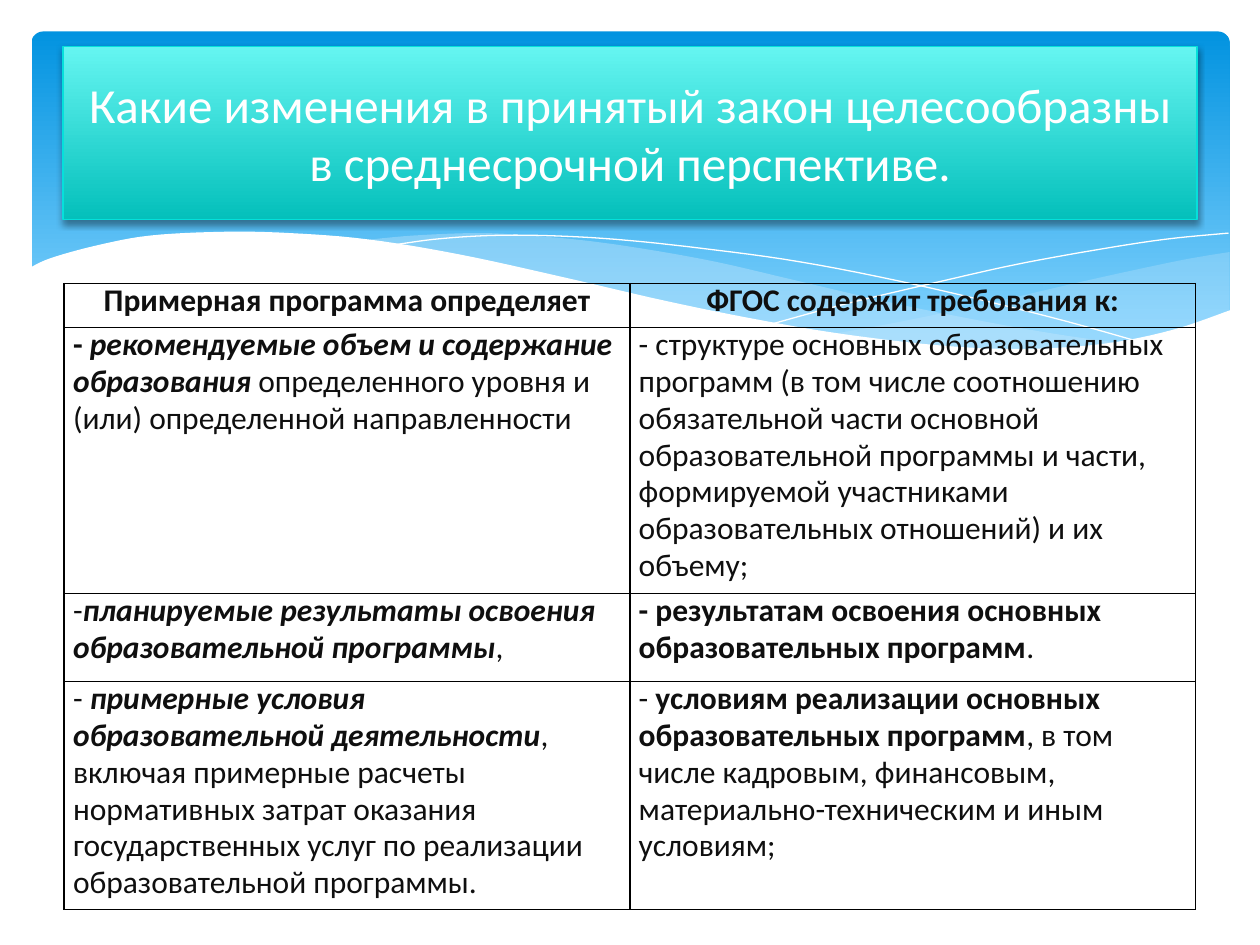
from lxml.etree import SubElement
from pptx import Presentation
from pptx.dml.color import RGBColor
from pptx.enum.shapes import MSO_SHAPE
from pptx.enum.text import MSO_ANCHOR, MSO_AUTO_SIZE, PP_ALIGN
from pptx.oxml import parse_xml
from pptx.oxml.ns import nsdecls, qn
from pptx.util import Inches, Pt

COLORS = {
    "sky": "0293E0", "pale": "83D3FE", "mist": "C6E7FC", "white": "FFFFFF",
    "aqua": "65F5F1", "teal": "04C0BB", "edge": "05E0DB",
    "ink": "0F0F0F", "black": "000000",
}
FONT = "Calibri"
TITLE = "Какие изменения в принятый закон целесообразны в среднесрочной перспективе."
# Each cell is a list of (text, style) runs: b is bold, i is italic
ROWS = [
    [[("Примерная программа определяет", "b")],
     [("ФГОС содержит требования к:", "b")]],
    [[("- ", "b"), ("рекомендуемые объем и содержание образования", "bi"),
      (" определенного уровня и (или) определенной направленности", "")],
     [("- структуре основных образовательных программ (в том числе соотношению "
       "обязательной части основной образовательной программы и части, "
       "формируемой участниками образовательных отношений) и их объему;", "")]],
    [[("-", ""), ("планируемые результаты освоения образовательной программы", "bi"),
      (",", "")],
     [("- результатам освоения основных образовательных программ", "b"), (".", "")]],
    [[("- ", ""), ("примерные условия образовательной деятельности", "bi"),
      (", включая примерные расчеты нормативных затрат оказания государственных "
       "услуг по реализации образовательной программы.", "")],
     [("- ", ""), ("условиям реализации основных образовательных программ", "b"),
      (", в том числе кадровым, финансовым, материально-техническим и иным "
       "условиям;", "")]],
]
HEIGHTS = [0.35, 2.11, 0.7, 1.81]

# Wave edges in inches; each edge is smoothed on its own
RIGHT = [
    [(9.76, 2), (9.35, 2.07), (8.61, 2.23), (7.79, 2.42), (7.06, 2.57), (6.61, 2.65)],
    [(6.61, 2.65), (7.05, 2.71), (7.57, 2.76), (8.03, 2.78), (8.44, 2.77),
     (8.89, 2.72), (9.28, 2.63), (9.76, 2.47)],
]
MIDDLE = [
    [(8.93, 2.73), (8.37, 2.65), (7.75, 2.54), (7.06, 2.4), (6.29, 2.22),
     (5.69, 2.08), (5.14, 1.98), (4.65, 1.91), (4.2, 1.87), (3.8, 1.85),
     (3.28, 1.87), (2.86, 1.91)],
    [(2.86, 1.91), (3.42, 1.99), (4.04, 2.11), (4.49, 2.22), (5.3, 2.4),
     (6.01, 2.55), (6.65, 2.66), (7.22, 2.74), (7.73, 2.77), (8.18, 2.78),
     (8.57, 2.77), (8.93, 2.73)],
]
FRONT = [
    [(9.77, 2.46), (9.3, 2.62), (8.75, 2.73), (8.09, 2.77), (7.44, 2.74),
     (6.68, 2.65), (6.03, 2.54), (5.29, 2.39), (4.47, 2.2), (3.65, 2.02),
     (2.92, 1.9), (2.3, 1.85), (1.77, 1.84), (1.19, 1.87), (0.76, 1.95),
     (0.4, 2.05), (0.23, 2.13)],
    [(0.23, 3.29), (9.77, 3.29)],
]
FALL = [(3.09, 1.95), (3.44, 1.9), (3.87, 1.87), (4.33, 1.87), (4.89, 1.9),
        (5.56, 1.97), (6.36, 2.08), (7.27, 2.26), (8.31, 2.51), (9.07, 2.72)]
RISE = [(6.13, 2.57), (6.72, 2.41), (7.48, 2.23), (8.06, 2.1), (8.66, 1.99),
        (9.24, 1.9), (9.75, 1.85)]


def rgb(name):
    return RGBColor.from_string(COLORS[name])


def apply(obj, **values):
    for key, value in values.items():
        setattr(obj, key, value)


def shade(shape, top, low, end=1.0):
    """Fill with a gradient that runs downwards."""
    shape.fill.gradient()
    shape.fill.gradient_angle = 270
    for stop, name, place in zip(shape.fill.gradient_stops, (top, low), (0, end)):
        stop.color.rgb = rgb(name)
        stop.position = place


def smooth(knots, steps=6):
    """Return points of a Catmull-Rom curve through the knots."""
    if len(knots) < 3:
        return knots
    ends = [knots[0], *knots, knots[-1]]
    points = [knots[0]]
    for a, b, c, d in zip(ends, ends[1:], ends[2:], ends[3:]):
        for step in range(1, steps + 1):
            t = step / steps
            points.append(tuple(
                0.5 * (2 * q + (r - p) * t + (2 * p - 5 * q + 4 * r - s) * t ** 2
                       + (3 * q - p - 3 * r + s) * t ** 3)
                for p, q, r, s in zip(a, b, c, d)))
    return points


def trace(slide, edges, closed):
    points = [(Inches(x), Inches(y)) for edge in edges for x, y in smooth(edge)]
    pen = slide.shapes.build_freeform(*points[0])
    pen.add_line_segments(points[1:], close=closed)
    shape = pen.convert_to_shape()
    shape.shadow.inherit = False
    return shape


def add_wave(slide, edges, name, alpha=100):
    wave = trace(slide, edges, True)
    wave.fill.solid()
    wave.fill.fore_color.rgb = rgb(name)
    wave.line.fill.background()
    if alpha < 100:
        tint = wave.element.spPr.find(qn("a:solidFill"))[0]
        SubElement(tint, qn("a:alpha"), val=str(alpha * 1000))


def add_thread(slide, edge):
    thread = trace(slide, [edge], False)
    thread.fill.background()
    thread.line.color.rgb = rgb("white")
    thread.line.width = Pt(0)


def add_sky(slide, box):
    sky = slide.shapes.add_shape(MSO_SHAPE.ROUNDED_RECTANGLE, *map(Inches, box))
    sky.adjustments[0] = 0.034
    sky.shadow.inherit = False
    shade(sky, "sky", "pale", 0.9)
    sky.line.fill.background()
    add_wave(slide, RIGHT, "mist", 29)
    add_wave(slide, MIDDLE, "mist", 40)
    add_thread(slide, FALL)
    add_thread(slide, RISE)
    add_wave(slide, FRONT, "white")


def set_title(slide, box):
    title = slide.shapes.title
    slide.shapes.element.append(title.element)  # in front of the waves
    apply(title, **dict(zip(("left", "top", "width", "height"), map(Inches, box))))
    shade(title, "aqua", "teal")
    title.line.color.rgb = rgb("edge")
    title.line.width = Pt(0.75)
    title.shadow.inherit = False
    cast = SubElement(title.element.spPr.find(qn("a:effectLst")), qn("a:outerShdw"),
                      blurRad=str(Pt(4)), dist=str(Pt(2)), dir="5400000", rotWithShape="0")
    tone = SubElement(cast, qn("a:srgbClr"), val=COLORS["black"])
    SubElement(tone, qn("a:alpha"), val="38000")
    frame = title.text_frame
    apply(frame, text=TITLE, word_wrap=True, auto_size=MSO_AUTO_SIZE.NONE,
          vertical_anchor=MSO_ANCHOR.MIDDLE)
    line = frame.paragraphs[0]
    line.alignment = PP_ALIGN.CENTER
    apply(line.runs[0].font, name=FONT, size=Pt(28))
    line.runs[0].font.color.rgb = rgb("white")


def rule(cell):
    """Draw the four borders of a cell."""
    for spot, side in enumerate("LRTB"):
        cell._tc.get_or_add_tcPr().insert(spot, parse_xml(
            f'<a:ln{side} {nsdecls("a")} w="{Pt(1)}"><a:solidFill>'
            f'<a:srgbClr val="{COLORS["black"]}"/></a:solidFill></a:ln{side}>'))


def fill_cell(cell, runs, align):
    cell.fill.background()
    apply(cell, margin_left=Inches(0.07), margin_right=Inches(0.07),
          margin_top=0, margin_bottom=0, vertical_anchor=MSO_ANCHOR.TOP)
    rule(cell)
    line = cell.text_frame.paragraphs[0]
    apply(line, alignment=align, line_spacing=Pt(21))
    for text, style in runs:
        run = line.add_run()
        run.text = text
        apply(run.font, name=FONT, size=Pt(18), bold="b" in style, italic="i" in style)
        run.font.color.rgb = rgb("ink")


def add_grid(slide, box):
    grid = slide.shapes.add_table(len(ROWS), 2, *map(Inches, box)).table
    apply(grid, first_row=False, horz_banding=False)
    for r, (row, height) in enumerate(zip(ROWS, HEIGHTS)):
        grid.rows[r].height = Inches(height)
        for c, runs in enumerate(row):
            fill_cell(grid.cell(r, c), runs, PP_ALIGN.LEFT if r else PP_ALIGN.CENTER)


def main():
    deck = Presentation()
    apply(deck, slide_width=Inches(10), slide_height=Inches(7.5))
    slide = deck.slides.add_slide(deck.slide_layouts[5])
    add_sky(slide, (0.25, 0.25, 9.51, 2.7))
    set_title(slide, (0.5, 0.37, 9, 1.37))
    add_grid(slide, (0.51, 2.25, 8.98, sum(HEIGHTS)))
    deck.save("out.pptx")


if __name__ == "__main__":
    main()
